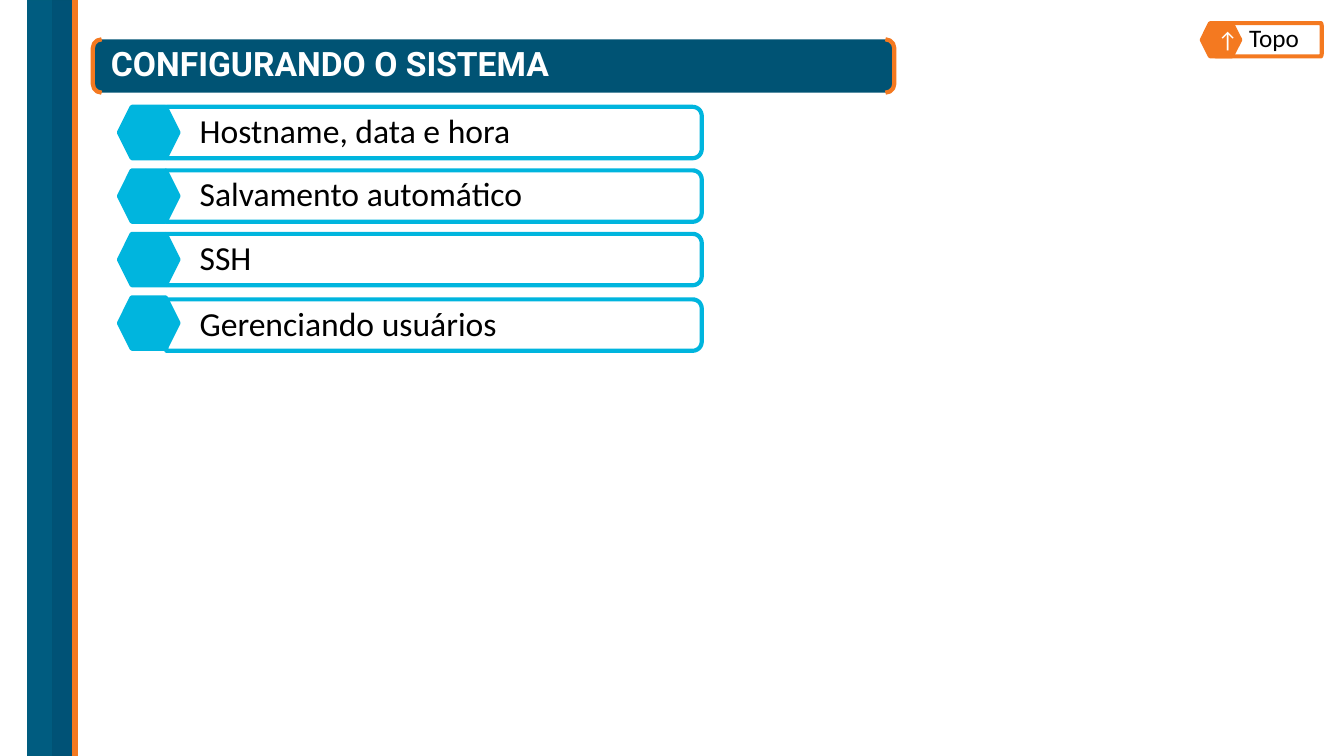
from dataclasses import dataclass
from math import cos, pi, sin

from lxml import etree
from pptx import Presentation
from pptx.dml.color import RGBColor
from pptx.enum.shapes import MSO_SHAPE
from pptx.enum.text import MSO_ANCHOR, MSO_AUTO_SIZE, PP_ALIGN
from pptx.oxml.ns import qn
from pptx.util import Inches, Pt

BRACKETS, HEXAGON, RECTANGLE = MSO_SHAPE.DOUBLE_BRACKET, MSO_SHAPE.HEXAGON, MSO_SHAPE.RECTANGLE
MIDDLE, NO_AUTOFIT = MSO_ANCHOR.MIDDLE, MSO_AUTO_SIZE.NONE
LEFT, CENTER = PP_ALIGN.LEFT, PP_ALIGN.CENTER


@dataclass(frozen=True)
class Theme:
    navy: str = "005374"
    cyan: str = "00B5DE"
    orange: str = "F47920"
    white: str = "FFFFFF"
    black: str = "000000"
    heading_font: str = "Roboto"
    body_font: str = "Calibri"
    large: int = 24
    medium: int = 18
    small: int = 16
    outline: float = 3


@dataclass(frozen=True)
class Box:
    left: float
    top: float
    width: float
    height: float


@dataclass(frozen=True)
class Stripe:
    left: float
    width: float
    fill: str
    line: str


@dataclass(frozen=True)
class Label:
    """A bar rounded on its right side, with a hexagon over its left end."""
    text: str
    bar: Box
    hexagon: Box
    color: str
    size: int
    corner: tuple[float, float]
    symbol: str = ""


THEME = Theme()
STRIPES = [
    Stripe(0.27, 0.45, "005C80", "005D7E"),
    Stripe(0.52, 0.2, "005276", "005274"),
    Stripe(0.72, 0.05, THEME.orange, THEME.orange),
]
TOPICS = ["Hostname, data e hora", "Salvamento automático", "SSH", "Gerenciando usuários"]
TOPIC_TOP, TOPIC_PITCH, TOPIC_HEIGHT = 1.06, 0.63, 0.51
LAST_BAR_DROP = 0.02


def topic_label(index: int, text: str) -> Label:
    top = TOPIC_TOP + index * TOPIC_PITCH
    drop = LAST_BAR_DROP if index == len(TOPICS) - 1 else 0
    return Label(text, Box(1.65, top + drop, 5.31, TOPIC_HEIGHT),
                 Box(1.18, top, 0.59, TOPIC_HEIGHT), THEME.cyan, THEME.large, (0.09, 0.09))


def paint(sp, fill: str, line: str, width: float) -> None:
    sp.shadow.inherit = False
    sp.fill.solid()
    sp.fill.fore_color.rgb = RGBColor.from_string(fill)
    sp.line.color.rgb = RGBColor.from_string(line)
    sp.line.width = Pt(width)


def add_preset(slide, kind, box: Box, fill: str, line: str, width: float):
    sp = slide.shapes.add_shape(kind, Inches(box.left), Inches(box.top),
                                Inches(box.width), Inches(box.height))
    paint(sp, fill, line, width)
    return sp


def write(sp, text: str, *, font: str, size: int, color: str, bold: bool = False,
          align=LEFT, spacing: float = 0.9,
          insets: tuple[float, float, float, float] = (0.1, 0.05, 0.1, 0.05)) -> None:
    tf = sp.text_frame
    tf.word_wrap = True
    tf.auto_size = NO_AUTOFIT
    tf.vertical_anchor = MIDDLE
    tf.margin_left, tf.margin_top, tf.margin_right, tf.margin_bottom = map(Inches, insets)
    p = tf.paragraphs[0]
    p.alignment = align
    p.line_spacing = spacing
    p.space_before = Pt(0)
    r = p.add_run()
    r.text = text
    r.font.name, r.font.size, r.font.bold = font, Pt(size), bold
    r.font.color.rgb = RGBColor.from_string(color)


def add_bar(slide, box: Box, corner: tuple[float, float], line: str):
    rx, ry = corner
    right, bottom = box.left + box.width, box.top + box.height
    angles = [step * pi / 16 for step in range(9)]
    upper = [(right - rx + rx * sin(a), box.top + ry - ry * cos(a)) for a in angles]
    lower = [(right - rx + rx * cos(a), bottom - ry + ry * sin(a)) for a in angles]
    points = upper + lower + [(box.left, bottom)]
    builder = slide.shapes.build_freeform(Inches(box.left), Inches(box.top))
    builder.add_line_segments([(Inches(x), Inches(y)) for x, y in points], close=True)
    sp = builder.convert_to_shape()
    paint(sp, THEME.white, line, THEME.outline)
    color = sp.fill._xPr.find(qn("a:solidFill"))[0]
    etree.SubElement(color, qn("a:alpha")).set("val", "90000")
    return sp


def add_label(slide, label: Label) -> None:
    bar = add_bar(slide, label.bar, label.corner, label.color)
    write(bar, label.text, font=THEME.body_font, size=label.size, color=THEME.black,
          insets=(0.33, 0.07, 0.07, 0.07))
    hexagon = add_preset(slide, HEXAGON, label.hexagon, label.color, label.color, THEME.outline)
    if label.symbol:
        write(hexagon, label.symbol, font=THEME.body_font, size=THEME.small,
              color=THEME.white, align=CENTER, spacing=1.0)


def add_title(slide, text: str) -> None:
    add_preset(slide, BRACKETS, Box(0.92, 0.39, 7.95, 0.53),
               THEME.navy, THEME.orange, THEME.outline)
    title = slide.shapes.title
    title.left, title.top, title.width, title.height = map(Inches, (1, 0.39, 7.87, 0.53))
    write(title, text, font=THEME.heading_font, size=THEME.large, color=THEME.white, bold=True)
    slide.shapes._spTree.append(title._element)  # bring the title in front of its panel


def main() -> None:
    prs = Presentation()
    prs.slide_width, prs.slide_height = Inches(13.33), Inches(7.5)
    slide = prs.slides.add_slide(prs.slide_layouts[5])
    for stripe in STRIPES:
        add_preset(slide, RECTANGLE, Box(stripe.left, 0, stripe.width, 7.5),
                   stripe.fill, stripe.line, 1)
    add_title(slide, "CONFIGURANDO O SISTEMA")
    for index, topic in enumerate(TOPICS):
        add_label(slide, topic_label(index, topic))
    add_label(slide, Label("Topo", Box(12.06, 0.23, 1.05, 0.33), Box(11.92, 0.23, 0.38, 0.33),
                           THEME.orange, THEME.medium, (0.01, 0.05), "↑"))
    prs.save("out.pptx")


if __name__ == "__main__":
    main()
